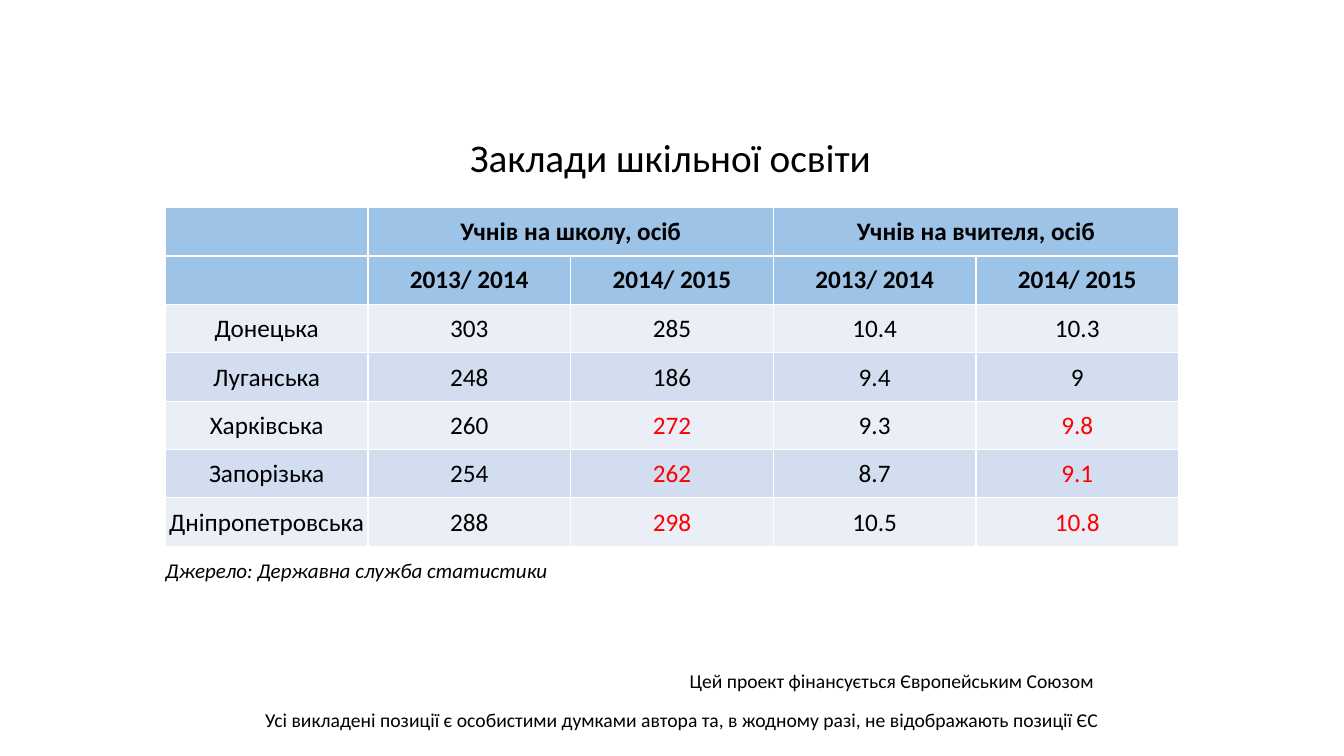
from dataclasses import dataclass

from pptx import Presentation
from pptx.dml.color import RGBColor
from pptx.enum import text
from pptx.util import Inches, Pt


@dataclass(frozen=True)
class Theme:
    font: str = "Calibri"
    ink: str = "000000"
    growth: str = "FF0000"
    header: str = "9DC3E6"
    bands: tuple = ("EAEFF7", "D2DEEF")
    title_size: int = 28
    table_size: int = 18
    source_size: int = 15
    footer_size: int = 14


THEME = Theme()
YEARS = ["2013/ 2014", "2014/ 2015"]
MEASURES = ["Учнів на школу, осіб", "Учнів на вчителя, осіб"]
REGIONS = [
    ("Донецька", "303", "285", "10.4", "10.3"),
    ("Луганська", "248", "186", "9.4", "9"),
    ("Харківська", "260", "272", "9.3", "9.8"),
    ("Запорізька", "254", "262", "8.7", "9.1"),
    ("Дніпропетровська", "288", "298", "10.5", "10.8"),
]


def add_run(paragraph, words, size, color=THEME.ink, bold=False, italic=False):
    run = paragraph.add_run()
    run.text = words
    font = run.font
    font.name, font.size = THEME.font, Pt(size)
    font.bold, font.italic = bold, italic
    font.color.rgb = RGBColor.from_string(color)


def add_line(slide, words, left, middle, width, size, align, italic=False):
    """Add one line of text centred vertically on middle."""
    height = 0.4
    box = slide.shapes.add_textbox(Inches(left), Inches(middle - height / 2),
                                   Inches(width), Inches(height))
    frame = box.text_frame
    frame.word_wrap = True
    frame.vertical_anchor = text.MSO_ANCHOR.MIDDLE
    frame.margin_left = frame.margin_right = frame.margin_top = frame.margin_bottom = 0
    paragraph = frame.paragraphs[0]
    paragraph.alignment = align
    add_run(paragraph, words, size, italic=italic)


def fill_cell(cell, words, fill, color=THEME.ink, bold=False):
    cell.fill.solid()
    cell.fill.fore_color.rgb = RGBColor.from_string(fill)
    cell.vertical_anchor = text.MSO_ANCHOR.MIDDLE
    if words:
        paragraph = cell.text_frame.paragraphs[0]
        paragraph.alignment = text.PP_ALIGN.CENTER
        add_run(paragraph, words, THEME.table_size, color, bold)


def add_school_table(slide):
    headers = [["", MEASURES[0], "", MEASURES[1], ""], ["", *YEARS, *YEARS]]
    row_count, column_count = len(headers) + len(REGIONS), len(headers[0])
    table = slide.shapes.add_table(
        row_count, column_count, Inches(1.64), Inches(2.06),
        Inches(2.01 * column_count), Inches(0.48 * row_count)).table

    for row, labels in enumerate(headers):
        for column, label in enumerate(labels):
            fill_cell(table.cell(row, column), label, THEME.header, bold=True)
    for column in (1, 3):
        table.cell(0, column).merge(table.cell(0, column + 1))

    for index, values in enumerate(REGIONS):
        for column, value in enumerate(values):
            cell = table.cell(len(headers) + index, column)
            cell.margin_left = cell.margin_right = cell.margin_top = Inches(0.01)
            cell.margin_bottom = 0
            later_year = column in (2, 4)
            grew = later_year and float(value) > float(values[column - 1])
            fill_cell(cell, value, THEME.bands[index % 2],
                      THEME.growth if grew else THEME.ink)


def main():
    presentation = Presentation()
    presentation.slide_width, presentation.slide_height = Inches(13.33), Inches(7.5)
    slide = presentation.slides.add_slide(presentation.slide_layouts[6])
    align = text.PP_ALIGN

    add_line(slide, "Заклади шкільної освіти", 0.75, 1.56, 11.8,
             THEME.title_size, align.CENTER)
    add_school_table(slide)
    add_line(slide, "Джерело: Державна служба статистики", 1.64, 5.66, 6,
             THEME.source_size, align.LEFT, italic=True)
    add_line(slide, "Цей проект фінансується Європейським Союзом", 6.84, 6.75, 5.5,
             THEME.footer_size, align.LEFT)
    add_line(slide, "Усі викладені позиції є особистими думками автора та, "
             "в жодному разі, не відображають позиції ЄС", 2.63, 7.14, 9.9,
             THEME.footer_size, align.LEFT)
    presentation.save("out.pptx")


if __name__ == "__main__":
    main()
